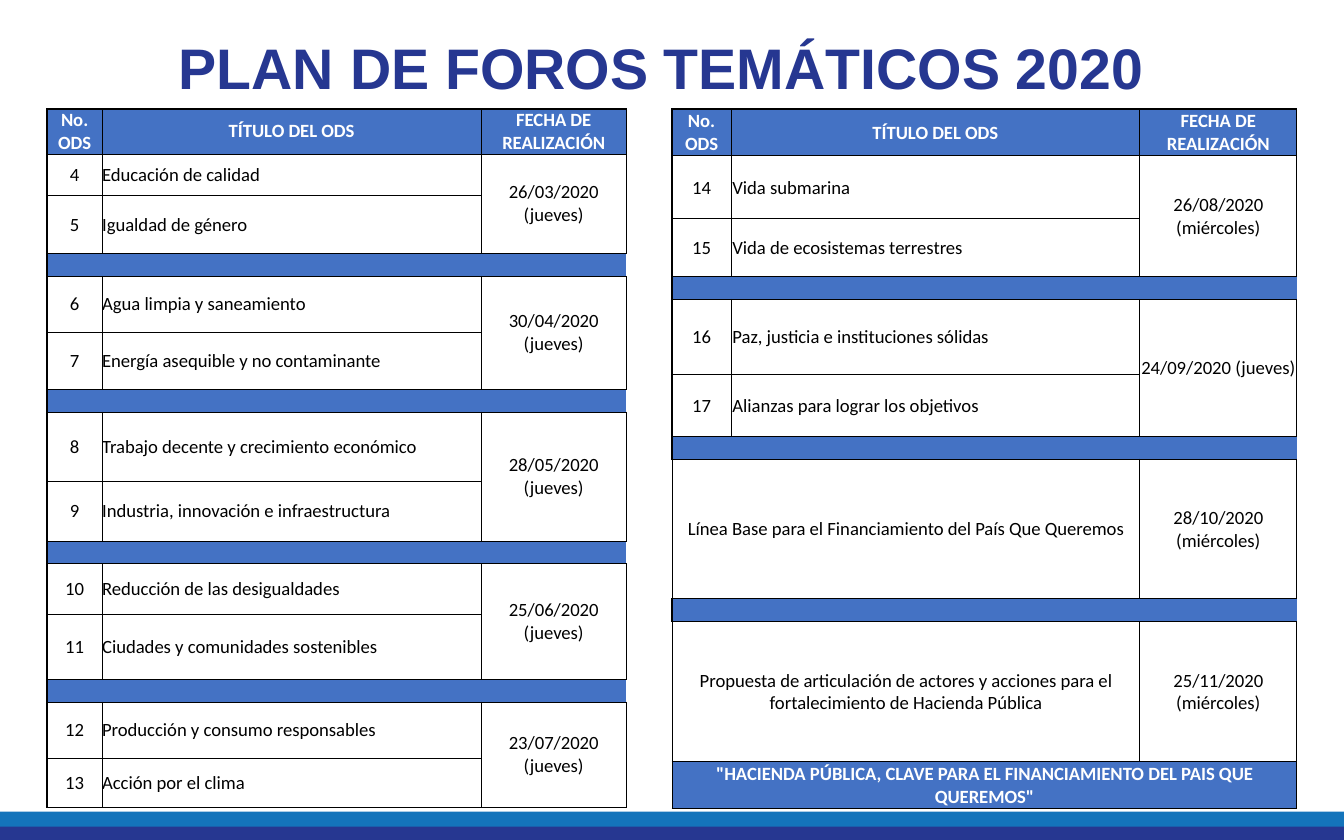
from lxml.etree import SubElement
from pptx import Presentation
from pptx.dml.color import RGBColor
from pptx.enum.shapes import MSO_SHAPE as Shape
from pptx.enum.text import MSO_ANCHOR as Anchor, MSO_AUTO_SIZE as AutoSize, PP_ALIGN as Align
from pptx.oxml.ns import qn
from pptx.util import Inches, Pt

NAVY = RGBColor(0x26, 0x37, 0x91)
SKY = RGBColor(0x14, 0x74, 0xBB)
BLUE = RGBColor(0x44, 0x72, 0xC4)
WHITE = RGBColor(0xFF, 0xFF, 0xFF)
BLACK = RGBColor(0, 0, 0)

WIDTH, HEIGHT = 10, 6.25
TABLE_TOP, BAND_HEIGHT = 0.81, 0.17
THIN, THICK = 0.5, 1
HEADINGS = ["No. ODS", "TÍTULO DEL ODS", "FECHA DE REALIZACIÓN"]

# Each forum: date, then its topics as (number, title, row height)
FIRST_HALF = [
    ("26/03/2020 (jueves)", [("4", "Educación de calidad", 0.31),
                             ("5", "Igualdad de género", 0.43)]),
    ("30/04/2020 (jueves)", [("6", "Agua limpia y saneamiento", 0.42),
                             ("7", "Energía asequible y no contaminante", 0.42)]),
    ("28/05/2020 (jueves)", [("8", "Trabajo decente y crecimiento económico", 0.52),
                             ("9", "Industria, innovación e infraestructura", 0.44)]),
    ("25/06/2020 (jueves)", [("10", "Reducción de las desigualdades", 0.38),
                             ("11", "Ciudades y comunidades sostenibles", 0.48)]),
    ("23/07/2020 (jueves)", [("12", "Producción y consumo responsables", 0.42),
                             ("13", "Acción por el clima", 0.36)]),
]
SECOND_HALF = [
    ("26/08/2020 (miércoles)", [("14", "Vida submarina", 0.47),
                                ("15", "Vida de ecosistemas terrestres", 0.43)]),
    ("24/09/2020 (jueves)", [("16", "Paz, justicia e instituciones sólidas", 0.56),
                             ("17", "Alianzas para lograr los objetivos", 0.46)]),
    ("28/10/2020 (miércoles)",
     [("", "Línea Base para el Financiamiento del País Que Queremos", 1.04)]),
    ("25/11/2020 (miércoles)",
     [("", "Propuesta de articulación de actores y acciones para el "
           "fortalecimiento de Hacienda Pública", 1.04)]),
]
MOTTO = '"HACIENDA PÚBLICA, CLAVE PARA EL FINANCIAMIENTO DEL PAIS QUE QUEREMOS"'


def add_title(slide, text):
    title = slide.shapes.title
    title.left, title.top = Inches(1.26), Inches(0.26)
    title.width, title.height = Inches(7.47), Inches(0.84)
    frame = title.text_frame
    frame.text = text
    frame.auto_size = AutoSize.NONE
    frame.word_wrap = True
    frame.vertical_anchor = Anchor.TOP
    frame.margin_left = frame.margin_right = Inches(0.07)
    frame.margin_top, frame.margin_bottom = Inches(0.08), Inches(0.04)
    line = frame.paragraphs[0]
    line.alignment, line.line_spacing = Align.LEFT, 0.8
    font = line.runs[0].font
    font.name, font.size, font.bold = "Arial", Pt(30.6), True
    font.color.rgb = NAVY


def add_stripe(slide, top, color):
    stripe = slide.shapes.add_shape(
        Shape.RECTANGLE, 0, Inches(top), Inches(WIDTH), Inches(0.14))
    stripe.shadow.inherit = False
    stripe.fill.solid()
    stripe.fill.fore_color.rgb = color
    stripe.line.fill.background()


def set_borders(cell, **widths):
    """Draw the L, R, T and B edges; a width of 0 leaves the edge open."""
    properties = cell._tc.get_or_add_tcPr()
    for side in "LRTB":
        width = widths.get(side, THIN)
        edge = SubElement(properties, qn(f"a:ln{side}"), w=str(Pt(width)))
        if width:
            fill = SubElement(edge, qn("a:solidFill"))
            SubElement(fill, qn("a:srgbClr"), val=str(BLACK))
        else:
            SubElement(edge, qn("a:noFill"))


def format_cell(cell, text="", margin=0, filled=False, align=Align.CENTER, **borders):
    cell.text = text
    cell.vertical_anchor = Anchor.MIDDLE
    cell.margin_left = cell.margin_right = cell.margin_top = Inches(margin)
    cell.margin_bottom = 0
    set_borders(cell, **borders)
    if filled:
        cell.fill.solid()
        cell.fill.fore_color.rgb = BLUE
    else:
        cell.fill.background()
    line = cell.text_frame.paragraphs[0]
    line.alignment = align
    for run in line.runs:
        run.font.name, run.font.size, run.font.bold = "Calibri", Pt(10), filled
        run.font.color.rgb = WHITE if filled else BLACK
    if not text:  # keeps empty cells from stretching the row
        line._p.get_or_add_endParaRPr().set("sz", "1000")


def fill_forum(table, row, date, topics, margin):
    for offset, (number, title, _) in enumerate(topics):
        cells = table.rows[row + offset].cells
        if number:
            format_cell(cells[0], number, margin, L=THICK)
            format_cell(cells[1], title, margin, align=Align.LEFT)
        else:
            format_cell(cells[0], title, margin)
            format_cell(cells[1])
            cells[0].merge(cells[1])
        format_cell(cells[2], "" if offset else date, margin)
    if len(topics) > 1:
        table.cell(row, 2).merge(table.cell(row + len(topics) - 1, 2))


def fill_band(table, row):
    cells = list(table.rows[row].cells)
    for column, cell in enumerate(cells):
        format_cell(cell, filled=True, L=0 if column else THICK, R=0)
    cells[0].merge(cells[-1])


def add_schedule(slide, left, columns, header_height, forums, margin=0, motto=None):
    # Row heights: header, forums parted by bands, closing motto
    heights = [header_height]
    for index, (_, topics) in enumerate(forums):
        heights += [BAND_HEIGHT] if index else []
        heights += [height for _, _, height in topics]
    heights += [0.34] if motto else []

    table = slide.shapes.add_table(
        len(heights), len(columns), Inches(left), Inches(TABLE_TOP),
        Inches(sum(columns)), Inches(sum(heights))).table
    table.first_row = table.horz_banding = False
    for column, width in zip(table.columns, columns):
        column.width = Inches(width)
    for row, height in zip(table.rows, heights):
        row.height = Inches(height)

    for column, heading in enumerate(HEADINGS):
        format_cell(table.cell(0, column), heading, margin, filled=True,
                    L=THIN if column else THICK, T=THICK)
    row = 1
    for index, (date, topics) in enumerate(forums):
        if index:
            fill_band(table, row)
            row += 1
        fill_forum(table, row, date, topics, margin)
        row += len(topics)
    if motto:
        cells = list(table.rows[row].cells)
        for column, cell in enumerate(cells):
            format_cell(cell, "" if column else motto, margin, filled=True)
        cells[0].merge(cells[-1])


def main():
    deck = Presentation()
    deck.slide_width, deck.slide_height = Inches(WIDTH), Inches(HEIGHT)
    slide = deck.slides.add_slide(deck.slide_layouts[5])

    add_title(slide, "PLAN DE FOROS TEMÁTICOS 2020")
    # Footer stripes
    add_stripe(slide, 6.04, SKY)
    add_stripe(slide, 6.15, NAVY)
    # Calendar in two halves
    add_schedule(slide, 0.35, [0.41, 2.82, 1.08], 0.33, FIRST_HALF)
    add_schedule(slide, WIDTH / 2, [0.44, 3.04, 1.17], 0.34, SECOND_HALF,
                 margin=0.01, motto=MOTTO)
    deck.save("out.pptx")


if __name__ == "__main__":
    main()
